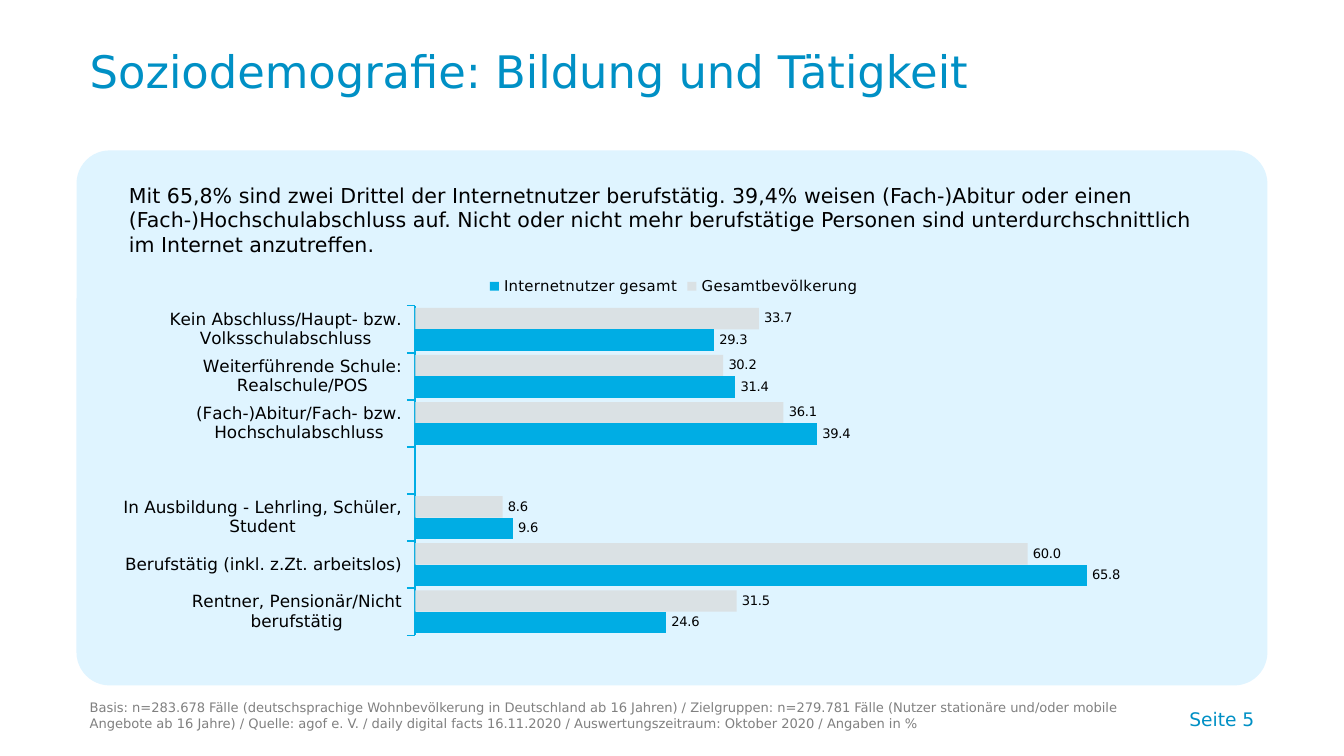
from lxml.etree import SubElement
from pptx import Presentation
from pptx.chart.data import CategoryChartData
from pptx.dml.color import RGBColor
from pptx.enum.chart import (XL_CHART_TYPE, XL_LABEL_POSITION, XL_LEGEND_POSITION,
                             XL_TICK_LABEL_POSITION, XL_TICK_MARK)
from pptx.enum.shapes import MSO_SHAPE
from pptx.enum.text import MSO_ANCHOR, PP_ALIGN
from pptx.oxml.ns import qn
from pptx.util import Pt

# Content
TITLE = "Soziodemografie: Bildung und Tätigkeit"
SUMMARY = ("Mit 65,8% sind zwei Drittel der Internetnutzer berufstätig. 39,4% weisen "
           "(Fach-)Abitur oder einen (Fach-)Hochschulabschluss auf. Nicht oder nicht mehr "
           "berufstätige Personen sind unterdurchschnittlich im Internet anzutreffen.")
SOURCE = ("Basis: n=283.678 Fälle (deutschsprachige Wohnbevölkerung in Deutschland ab 16 Jahren) / "
          "Zielgruppen: n=279.781 Fälle (Nutzer stationäre und/oder mobile Angebote ab 16 Jahre) / "
          "Quelle: agof e. V. / daily digital facts 16.11.2020 / "
          "Auswertungszeitraum: Oktober 2020 / Angaben in %")
PAGE_LABEL = "Seite 5"
GROUPS = [
    # label, Gesamtbevölkerung, Internetnutzer gesamt
    ("Kein Abschluss/Haupt- bzw. Volksschulabschluss", 33.7, 29.3),
    ("Weiterführende Schule: Realschule/POS", 30.2, 31.4),
    ("(Fach-)Abitur/Fach- bzw. Hochschulabschluss", 36.1, 39.4),
    ("", None, None),
    ("In Ausbildung - Lehrling, Schüler, Student", 8.6, 9.6),
    ("Berufstätig (inkl. z.Zt. arbeitslos)", 60.0, 65.8),
    ("Rentner, Pensionär/Nicht berufstätig", 31.5, 24.6),
]

# Style
FONT = "DejaVu Sans"
NUMBERS = "#,##0.0"
BLUE = RGBColor(0x00, 0x90, 0xC5)
CYAN = RGBColor(0x00, 0xAD, 0xE4)
PALE = RGBColor(0xDF, 0xF4, 0xFF)
LIGHT_GRAY = RGBColor(0xD9, 0xD9, 0xD9)
GRAY = RGBColor(0x80, 0x80, 0x80)
BLACK = RGBColor(0, 0, 0)
SERIES = [("Gesamtbevölkerung", LIGHT_GRAY, 70), ("Internetnutzer gesamt", CYAN, 100)]

# Places: left, top, width, height in points
LEFT, WIDTH = 41, 638
INNER_LEFT, INNER_WIDTH = 62, 598
PANEL = (LEFT, 80.6, WIDTH, 286.6)
CHART = (INNER_LEFT, 140.4, INNER_WIDTH, 217.4)
PLOT = {"x": 0.268, "y": 0.108, "w": 0.732, "h": 0.812}
TEXTS = [
    # text, place, size, colour, anchor, alignment, line spacing
    (TITLE, (LEFT, 20.2, 528, 40.3), 24, BLUE, MSO_ANCHOR.MIDDLE, PP_ALIGN.LEFT, 0.8),
    (SUMMARY, (INNER_LEFT, 94.3, INNER_WIDTH, 46), 11, BLACK, MSO_ANCHOR.TOP, PP_ALIGN.LEFT, 1.0),
    (SOURCE, (LEFT, 367.2, 567.4, 28), 7, GRAY, MSO_ANCHOR.BOTTOM, PP_ALIGN.LEFT, 1.0),
    (PAGE_LABEL, (471, 367.2, 208, 27.4), 10, BLUE, MSO_ANCHOR.BOTTOM, PP_ALIGN.RIGHT, 1.0),
]


def points(place):
    return [Pt(length) for length in place]


def set_font(font, size, color):
    font.name, font.size = FONT, Pt(size)
    font.color.rgb = color


def add_panel(page):
    panel = page.shapes.add_shape(MSO_SHAPE.ROUNDED_RECTANGLE, *points(PANEL))
    panel.adjustments[0] = 0.062
    panel.shadow.inherit = False
    panel.fill.solid()
    panel.fill.fore_color.rgb = PALE
    panel.line.fill.background()


def add_text(page, text, place, size, color, anchor, alignment, spacing):
    frame = page.shapes.add_textbox(*points(place)).text_frame
    frame.word_wrap = True
    frame.vertical_anchor = anchor
    para = frame.paragraphs[0]
    para.alignment, para.line_spacing = alignment, spacing
    span = para.add_run()
    span.text = text
    set_font(span.font, size, color)


def place_plot(chart):
    area = chart.plots[0]._element.getparent()
    for old in area.findall(qn("c:layout")):
        area.remove(old)
    layout = SubElement(area, qn("c:layout"))
    area.insert(0, layout)
    manual = SubElement(layout, qn("c:manualLayout"))
    settings = [("layoutTarget", "inner"), ("xMode", "edge"), ("yMode", "edge"), *PLOT.items()]
    for name, value in settings:
        SubElement(manual, qn("c:" + name)).set("val", str(value))


def add_bar_chart(page):
    labels, *columns = zip(*GROUPS)
    data = CategoryChartData(number_format=NUMBERS)
    data.categories = labels
    for (name, _, _), values in zip(SERIES, columns):
        data.add_series(name, values)
    chart = page.shapes.add_chart(XL_CHART_TYPE.BAR_CLUSTERED, *points(CHART), data).chart
    set_font(chart.font, 9, BLACK)
    chart.has_title = False
    place_plot(chart)

    # Legend
    chart.has_legend = True
    chart.legend.position = XL_LEGEND_POSITION.TOP
    chart.legend.include_in_layout = False
    set_font(chart.legend.font, 8, BLACK)

    # Axes
    groups, percent = chart.category_axis, chart.value_axis
    groups.reverse_order = True
    groups.has_major_gridlines = False
    groups.major_tick_mark = XL_TICK_MARK.OUTSIDE
    groups.tick_label_position = XL_TICK_LABEL_POSITION.LOW
    groups.format.line.color.rgb = CYAN
    groups.format.line.width = Pt(0.75)
    percent.minimum_scale, percent.maximum_scale = 0, 80
    percent.has_major_gridlines = False
    percent.visible = False

    # Bars and their values
    plot = chart.plots[0]
    plot.gap_width, plot.overlap = 20, 0
    plot.vary_by_categories = False
    for series, (_, color, opacity) in zip(plot.series, SERIES):
        series.invert_if_negative = False
        fill = series.format.fill
        fill.solid()
        fill.fore_color.rgb = color
        if opacity < 100:
            tint = series._element.find(".//" + qn("a:srgbClr"))
            SubElement(tint, qn("a:alpha")).set("val", str(opacity * 1000))
        values = series.data_labels
        values.show_value = True
        values.number_format, values.number_format_is_linked = NUMBERS, False
        values.position = XL_LABEL_POSITION.OUTSIDE_END
        set_font(values.font, 7, BLACK)


def main():
    deck = Presentation()
    deck.slide_width, deck.slide_height = Pt(720), Pt(405)
    page = deck.slides.add_slide(deck.slide_layouts[6])
    add_panel(page)
    add_bar_chart(page)
    for text in TEXTS:
        add_text(page, *text)
    deck.save("out.pptx")


if __name__ == "__main__":
    main()
